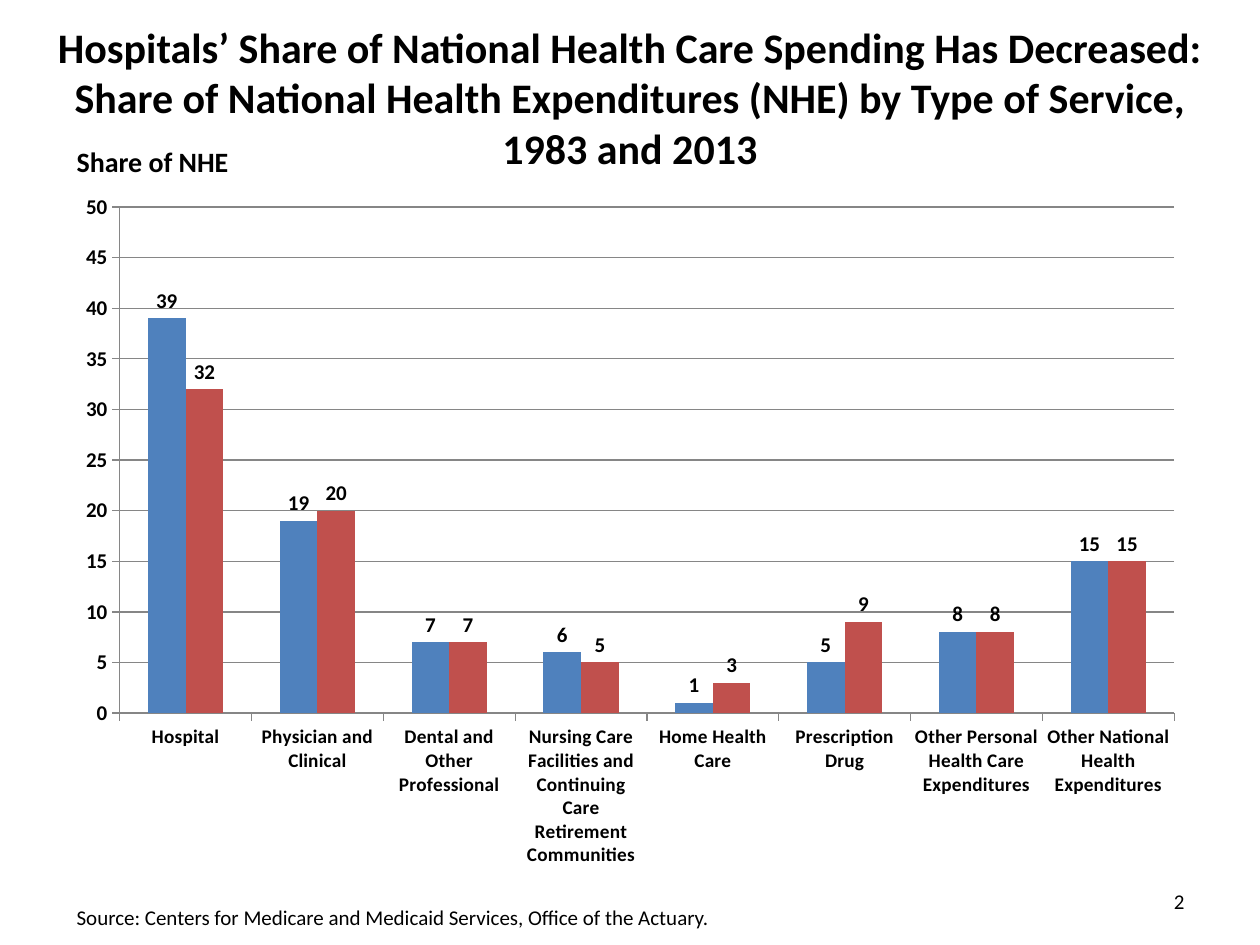
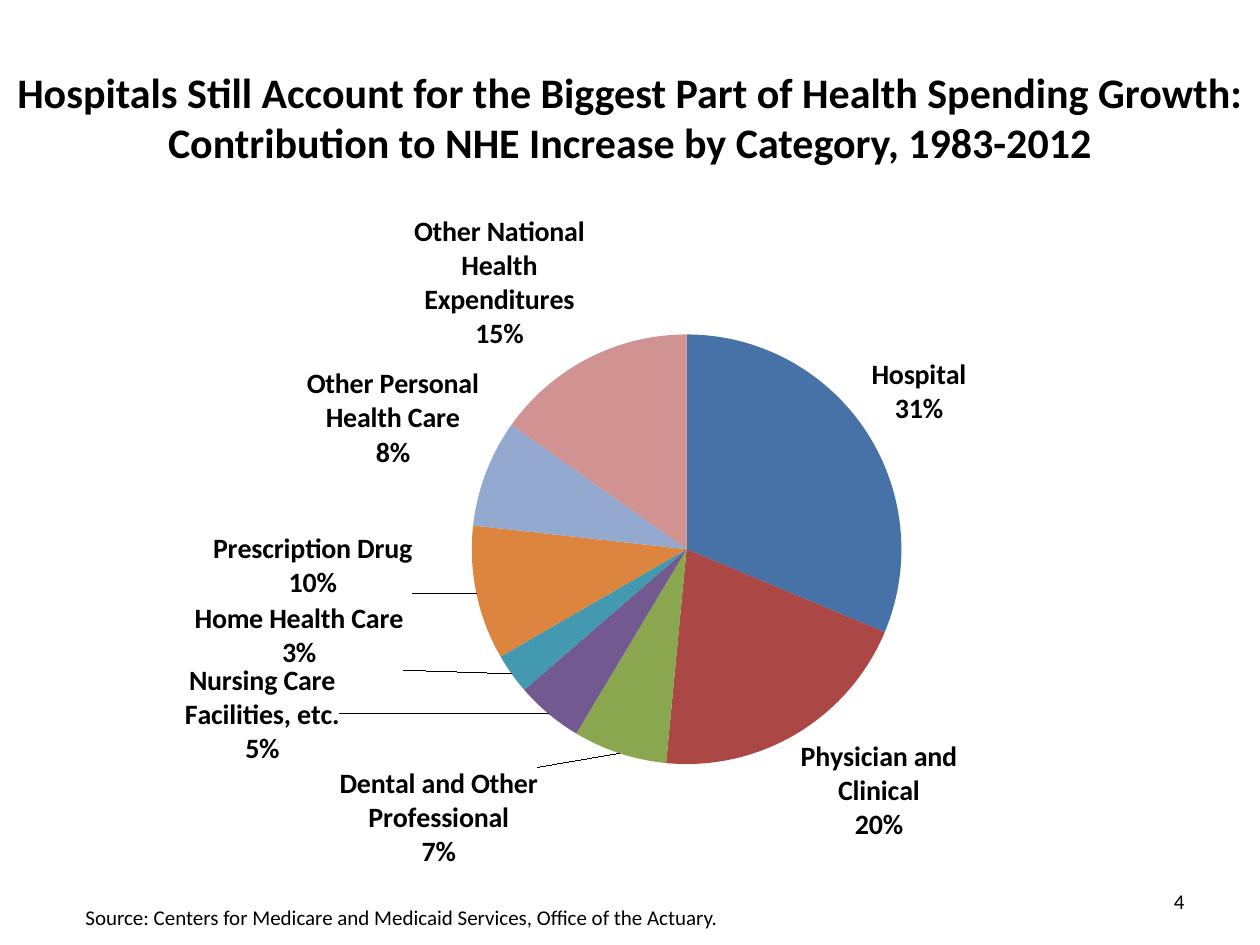
from copy import deepcopy

from lxml import etree
from pptx import Presentation
from pptx.chart.data import CategoryChartData
from pptx.dml.color import RGBColor
from pptx.enum.chart import XL_CHART_TYPE, XL_LABEL_POSITION, XL_TICK_MARK
from pptx.enum.text import MSO_ANCHOR, PP_ALIGN
from pptx.oxml.ns import qn
from pptx.util import Inches, Pt

COLUMN = XL_CHART_TYPE.COLUMN_CLUSTERED
PIE = XL_CHART_TYPE.PIE
OUTSIDE_END = XL_LABEL_POSITION.OUTSIDE_END
TICK_OUT = XL_TICK_MARK.OUTSIDE
LEFT, CENTER, RIGHT = PP_ALIGN.LEFT, PP_ALIGN.CENTER, PP_ALIGN.RIGHT
TOP, MIDDLE, BOTTOM = MSO_ANCHOR.TOP, MSO_ANCHOR.MIDDLE, MSO_ANCHOR.BOTTOM

FONT = "Calibri"
BLACK = "000000"
GRID = "868686"
COLUMN_COLORS = ["4F81BD", "C0504D"]
PIE_COLORS = ["4672A8", "AB4744", "8AA64F", "725990",
              "4299B0", "DC853E", "93A9CF", "D19392"]
SOURCE = "Source: Centers for Medicare and Medicaid Services, Office of the Actuary."

SHARE_CATEGORIES = [
    "Hospital", "Physician and Clinical", "Dental and Other Professional",
    "Nursing Care Facilities and Continuing Care Retirement Communities",
    "Home Health Care", "Prescription Drug",
    "Other Personal Health Care Expenditures",
    "Other National Health Expenditures"]
SHARES = {"1983": [39, 19, 7, 6, 1, 5, 8, 15],
          "2013": [32, 20, 7, 5, 3, 9, 8, 15]}
GROWTH = {
    "Hospital": 31, "Physician and Clinical": 20,
    "Dental and Other Professional": 7, "Nursing Care Facilities, etc.": 5,
    "Home Health Care": 3, "Prescription Drug": 10,
    "Other Personal Health Care": 8, "Other National Health Expenditures": 15}
LABEL_SHIFTS = {2: (-0.07, 0.01), 3: (-0.18, -0.08),
                4: (-0.09, -0.11), 5: (-0.05, -0.09)}


def color(value):
    return RGBColor.from_string(value)


def style_font(font, size, bold=False):
    font.name = FONT
    font.size = Pt(size)
    font.bold = bold
    font.color.rgb = color(BLACK)


def add_text(slide, box, lines, size, bold=False, align=LEFT, anchor=TOP, wrap=True):
    shape = slide.shapes.add_textbox(*map(Inches, box))
    frame = shape.text_frame
    frame.word_wrap = wrap
    frame.vertical_anchor = anchor
    paragraph = frame.paragraphs[0]
    paragraph.alignment = align
    for index, line in enumerate(lines):
        if index:
            paragraph.add_line_break()
        run = paragraph.add_run()
        run.text = line
        style_font(run.font, size, bold)


def add_title(slide, top, lines, anchor):
    add_text(slide, (0, top, 10, 1.25), lines, 24, True, CENTER, anchor)


def add_footer(slide, number, source_left):
    add_text(slide, (7.17, 6.95, 2.33, 0.4), [number], 12, align=RIGHT, anchor=MIDDLE)
    add_text(slide, (source_left, 7.13, 8.6, 0.3), [SOURCE], 12)


def add_element(parent, tag, value=None):
    element = etree.SubElement(parent, qn(tag))
    if value is not None:
        element.set("val", str(value))
    return element


def make_layout(**settings):
    layout = etree.Element(qn("c:layout"))
    manual = add_element(layout, "c:manualLayout")
    for name, value in settings.items():
        add_element(manual, f"c:{name}", value)
    return layout


def place_plot(chart, x, y, w, h):
    area = chart.plots[0]._element.getparent()
    for layout in area.findall(qn("c:layout")):
        area.remove(layout)
    area.insert(0, make_layout(layoutTarget="inner", xMode="edge", yMode="edge",
                               x=x, y=y, w=w, h=h))


def add_chart(slide, kind, box, categories, series, plot_box, size):
    data = CategoryChartData()
    data.categories = categories
    for name, values in series.items():
        data.add_series(name, values)
    chart = slide.shapes.add_chart(kind, *map(Inches, box), data).chart
    chart.has_legend = False
    chart.has_title = False
    style_font(chart.font, size, True)
    place_plot(chart, *plot_box)
    return chart


def fill_solid(target, value):
    target.format.fill.solid()
    target.format.fill.fore_color.rgb = color(value)


def style_axis(axis, size):
    axis.major_tick_mark = TICK_OUT
    axis.format.line.color.rgb = color(GRID)
    style_font(axis.tick_labels.font, size, True)


def style_labels(labels, number_format, size):
    labels.number_format = number_format
    labels.number_format_is_linked = False
    labels.position = OUTSIDE_END
    style_font(labels.font, size, True)


def add_share_columns(slide):
    chart = add_chart(slide, COLUMN, (0.5, 1.42, 9, 5.58), SHARE_CATEGORIES,
                      SHARES, (0.05, 0.04, 0.93, 0.72), 12)
    style_axis(chart.category_axis, 11)
    axis = chart.value_axis
    style_axis(axis, 12)
    axis.minimum_scale, axis.maximum_scale, axis.major_unit = 0, 50, 5
    axis.tick_labels.number_format = "#,##0"
    axis.tick_labels.number_format_is_linked = False
    axis.major_gridlines.format.line.color.rgb = color(GRID)
    plot = chart.plots[0]
    plot.gap_width = 150
    plot.overlap = 0
    plot.vary_by_categories = False
    for series, value in zip(plot.series, COLUMN_COLORS):
        fill_solid(series, value)
        series.data_labels.show_value = True
        style_labels(series.data_labels, "#,##0", 12)


def shift_labels(labels):
    shared = [child for child in labels if child.tag != qn("c:showLeaderLines")]
    for position, (index, (x, y)) in enumerate(LABEL_SHIFTS.items()):
        label = etree.Element(qn("c:dLbl"))
        add_element(label, "c:idx", index)
        label.append(make_layout(x=x, y=y))
        label.extend(deepcopy(child) for child in shared)
        labels.insert(position, label)


def add_growth_pie(slide):
    chart = add_chart(slide, PIE, (0.5, 1.5, 9, 5.5), list(GROWTH),
                      {"Contribution": list(GROWTH.values())},
                      (0.36, 0.21, 0.38, 0.62), 18)
    plot = chart.plots[0]
    plot.vary_by_categories = True
    series = plot.series[0]
    for index, value in enumerate(PIE_COLORS):
        fill_solid(series.points[index], value)
    labels = series.data_labels
    labels.show_value = False
    labels.show_category_name = True
    labels.show_percentage = True
    style_labels(labels, "0%", 16)
    separator = etree.Element(qn("c:separator"))
    separator.text = "\n"
    labels._element.find(qn("c:showBubbleSize")).addnext(separator)
    shift_labels(labels._element)


def main():
    presentation = Presentation()
    presentation.slide_width = Inches(10)
    presentation.slide_height = Inches(7.5)
    blank = presentation.slide_layouts[6]

    slide = presentation.slides.add_slide(blank)
    add_title(slide, 0.17, [
        "Hospitals’ Share of National Health Care Spending Has Decreased:",
        "Share of National Health Expenditures (NHE) by Type of Service,",
        "1983 and 2013"], BOTTOM)
    add_share_columns(slide)
    add_footer(slide, "2", 0.51)
    add_text(slide, (0.51, 1.1, 1.42, 0.37), ["Share of NHE"], 16, True, wrap=False)

    slide = presentation.slides.add_slide(blank)
    add_title(slide, 0.3, [
        "Hospitals Still Account for the Biggest Part of Health Spending Growth:",
        "Contribution to NHE Increase by Category, 1983-2012"], MIDDLE)
    add_growth_pie(slide)
    add_footer(slide, "4", 0.58)

    presentation.save("out.pptx")


if __name__ == "__main__":
    main()
